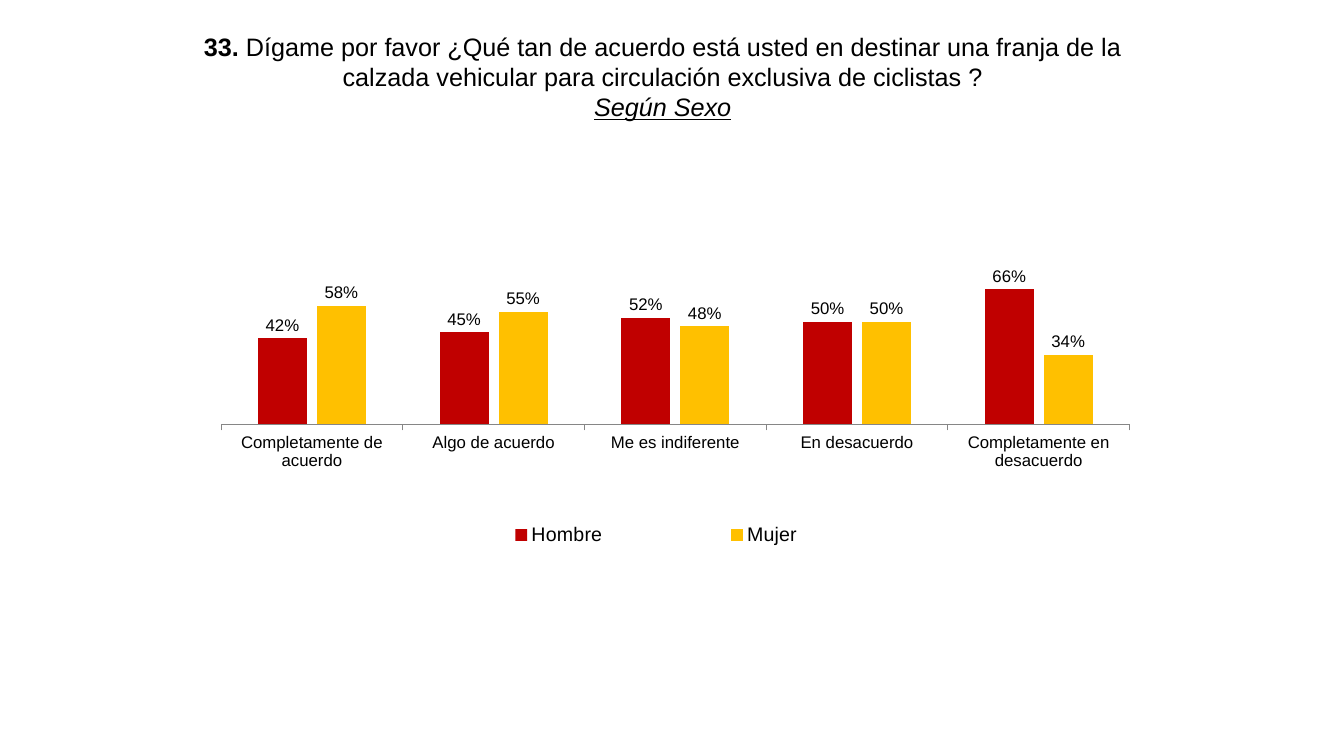
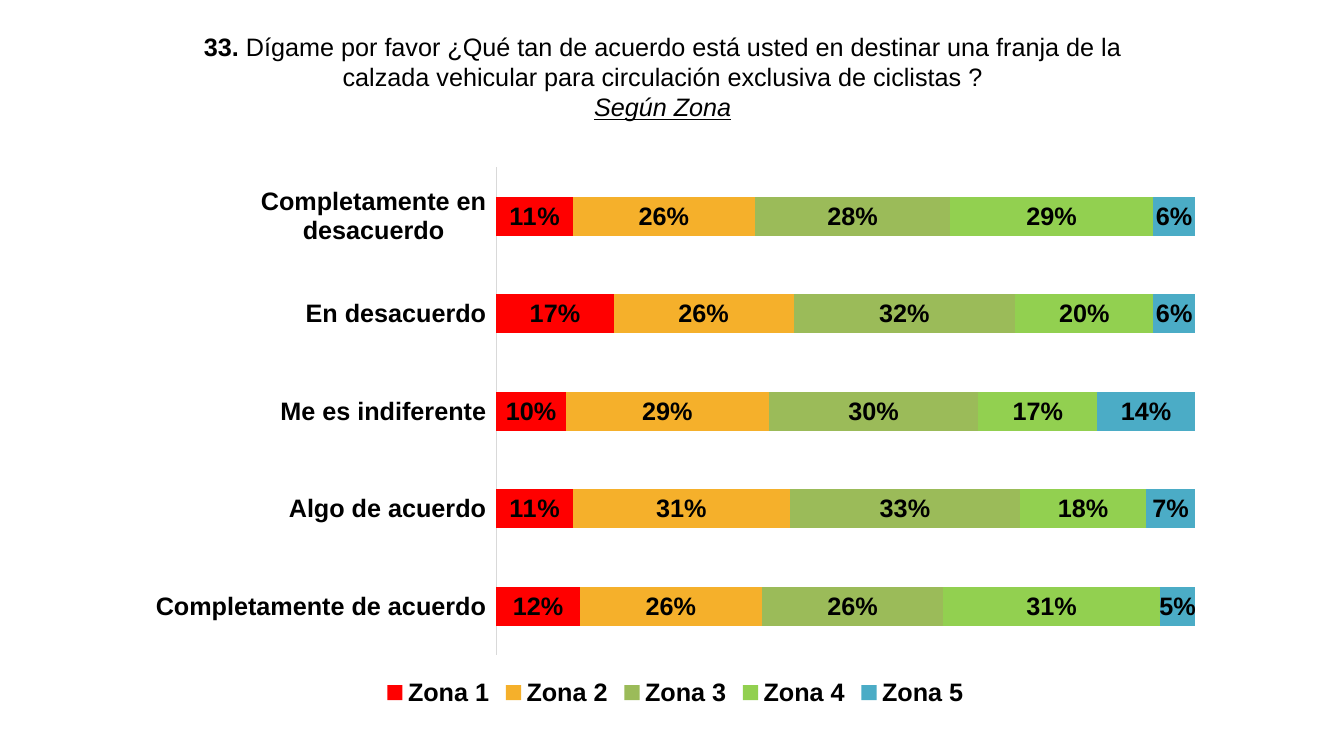
from dataclasses import dataclass
from typing import NamedTuple, Optional

from lxml.etree import SubElement
from pptx import Presentation
from pptx.chart.chart import Chart
from pptx.chart.data import CategoryChartData
from pptx.dml.color import RGBColor
from pptx.enum.chart import XL_CHART_TYPE as ChartType
from pptx.enum.chart import XL_LABEL_POSITION as LabelPos
from pptx.enum.chart import XL_LEGEND_POSITION as LegendPos
from pptx.enum.chart import XL_TICK_LABEL_POSITION as TickLabelPos
from pptx.enum.chart import XL_TICK_MARK as TickMark
from pptx.enum.text import MSO_ANCHOR, MSO_AUTO_SIZE, PP_ALIGN
from pptx.oxml.ns import qn
from pptx.slide import Slide
from pptx.util import Cm, Pt


@dataclass(frozen=True)
class Theme:
    font: str = "Arial"
    text: str = "000000"
    axis: str = "868686"
    light_axis: str = "D9D9D9"
    title_size: int = 18
    legend_size: int = 14
    label_size: int = 12


class Box(NamedTuple):
    x: float
    y: float
    w: float
    h: float


class Series(NamedTuple):
    name: str
    color: str
    values: tuple[float, ...]


@dataclass(frozen=True)
class ChartSlide:
    subtitle: str
    kind: ChartType
    box: Box
    series: tuple[Series, ...]
    overlap: int
    label_pos: LabelPos
    legend_pos: LegendPos
    tick: TickMark
    axis_color: str
    label_size: int
    legend_size: int
    bold: bool = False
    plot_area: Optional[Box] = None
    legend_area: Optional[Box] = None


THEME = Theme()
TITLE_BOX = Box(4.65, 0.66, 24.1, 2.57)
NUMBER = "33. "
QUESTION = (
    "Dígame por favor ¿Qué tan de acuerdo está usted en destinar una franja "
    "de la calzada vehicular para circulación exclusiva de ciclistas ?"
)
ANSWERS = (
    "Completamente de acuerdo",
    "Algo de acuerdo",
    "Me es indiferente",
    "En desacuerdo",
    "Completamente en desacuerdo",
)
SLIDES = (
    ChartSlide(
        subtitle="Según Sexo",
        kind=ChartType.COLUMN_CLUSTERED,
        box=Box(4.85, 5.54, 24.1, 10.52),
        series=(
            Series("Hombre", "C00000", (0.42, 0.45, 0.52, 0.5, 0.66)),
            Series("Mujer", "FFC000", (0.58, 0.55, 0.48, 0.5, 0.34)),
        ),
        overlap=-20,
        label_pos=LabelPos.OUTSIDE_END,
        legend_pos=LegendPos.RIGHT,
        tick=TickMark.OUTSIDE,
        axis_color=THEME.axis,
        label_size=THEME.label_size,
        legend_size=THEME.legend_size,
        plot_area=Box(0.03, 0, 0.95, 0.49),
        legend_area=Box(0.21, 0.7, 0.55, 0.11),
    ),
    ChartSlide(
        subtitle="Según Zona",
        kind=ChartType.BAR_STACKED_100,
        box=Box(3.38, 3.94, 27.28, 14),
        series=(
            Series("Zona 1", "FF0000", (0.12, 0.11, 0.1, 0.17, 0.11)),
            Series("Zona 2", "F5B02B", (0.26, 0.31, 0.29, 0.26, 0.26)),
            Series("Zona 3", "9BBB59", (0.26, 0.33, 0.3, 0.32, 0.28)),
            Series("Zona 4", "92D050", (0.31, 0.18, 0.17, 0.2, 0.29)),
            Series("Zona 5", "4BACC6", (0.05, 0.07, 0.14, 0.06, 0.06)),
        ),
        overlap=100,
        label_pos=LabelPos.CENTER,
        legend_pos=LegendPos.BOTTOM,
        tick=TickMark.NONE,
        axis_color=THEME.light_axis,
        label_size=THEME.title_size,
        legend_size=THEME.title_size,
        bold=True,
    ),
)


def rgb(color: str) -> RGBColor:
    return RGBColor.from_string(color)


def set_font(font, size: int, bold: bool = False) -> None:
    font.name = THEME.font
    font.size = Pt(size)
    font.bold = bold
    font.color.rgb = rgb(THEME.text)


def add_title(slide: Slide, subtitle: str) -> None:
    sp = slide.shapes.title
    sp.left, sp.top, sp.width, sp.height = map(Cm, TITLE_BOX)
    tf = sp.text_frame
    tf.word_wrap = True
    tf.auto_size = MSO_AUTO_SIZE.SHAPE_TO_FIT_TEXT
    tf.vertical_anchor = MSO_ANCHOR.TOP
    p = tf.paragraphs[0]
    p.alignment = PP_ALIGN.CENTER
    set_font(p.font, THEME.title_size)
    r = p.add_run()
    r.text = NUMBER
    r.font.bold = True
    p.add_run().text = QUESTION
    p.add_line_break()
    r = p.add_run()
    r.text = subtitle
    r.font.italic = True
    r.font.underline = True


def set_layout(parent, index: int, area: Box, inner: bool = False) -> None:
    for old in parent.findall(qn("c:layout")):
        parent.remove(old)
    layout = SubElement(parent, qn("c:layout"))
    parent.insert(index, layout)
    manual = SubElement(layout, qn("c:manualLayout"))
    settings = [("layoutTarget", "inner")] if inner else []
    settings += [("xMode", "edge"), ("yMode", "edge")]
    settings += [(name, str(value)) for name, value in area._asdict().items()]
    for name, value in settings:
        SubElement(manual, qn(f"c:{name}")).set("val", value)


def format_axes(chart: Chart, spec: ChartSlide) -> None:
    axis = chart.category_axis
    axis.major_tick_mark = spec.tick
    axis.minor_tick_mark = TickMark.NONE
    axis.tick_label_position = TickLabelPos.LOW
    axis.has_major_gridlines = False
    axis.format.line.color.rgb = rgb(spec.axis_color)
    axis.format.line.width = Pt(0.75)
    set_font(axis.tick_labels.font, spec.label_size, spec.bold)
    values = chart.value_axis
    values.minimum_scale, values.maximum_scale = 0, 1
    values.has_major_gridlines = False
    values.visible = False


def format_series(chart: Chart, spec: ChartSlide) -> None:
    plot = chart.plots[0]
    plot.gap_width = 150
    plot.overlap = spec.overlap
    plot.vary_by_categories = False
    for bars, series in zip(plot.series, spec.series):
        bars.invert_if_negative = False
        bars.format.fill.solid()
        bars.format.fill.fore_color.rgb = rgb(series.color)
        labels = bars.data_labels
        labels.show_value = True
        labels.number_format = "0%"
        labels.number_format_is_linked = False
        labels.position = spec.label_pos
        set_font(labels.font, spec.label_size, spec.bold)


def format_legend(chart: Chart, spec: ChartSlide) -> None:
    chart.has_legend = True
    legend = chart.legend
    legend.position = spec.legend_pos
    legend.include_in_layout = False
    set_font(legend.font, spec.legend_size, spec.bold)


def add_answer_chart(slide: Slide, spec: ChartSlide) -> None:
    data = CategoryChartData(number_format="0%")
    data.categories = ANSWERS
    for series in spec.series:
        data.add_series(series.name, series.values)
    chart = slide.shapes.add_chart(spec.kind, *map(Cm, spec.box), data).chart
    chart.has_title = False
    set_font(chart.font, THEME.title_size, spec.bold)
    format_axes(chart, spec)
    format_series(chart, spec)
    format_legend(chart, spec)
    root = chart.element
    if spec.plot_area:
        set_layout(root.find(f".//{qn('c:plotArea')}"), 0, spec.plot_area, inner=True)
    if spec.legend_area:
        set_layout(root.find(f".//{qn('c:legend')}"), 1, spec.legend_area)


def main() -> None:
    prs = Presentation()
    prs.slide_width, prs.slide_height = Cm(33.87), Cm(19.05)
    title_only = prs.slide_layouts[5]
    for spec in SLIDES:
        slide = prs.slides.add_slide(title_only)
        add_title(slide, spec.subtitle)
        add_answer_chart(slide, spec)
    prs.save("out.pptx")


if __name__ == "__main__":
    main()
